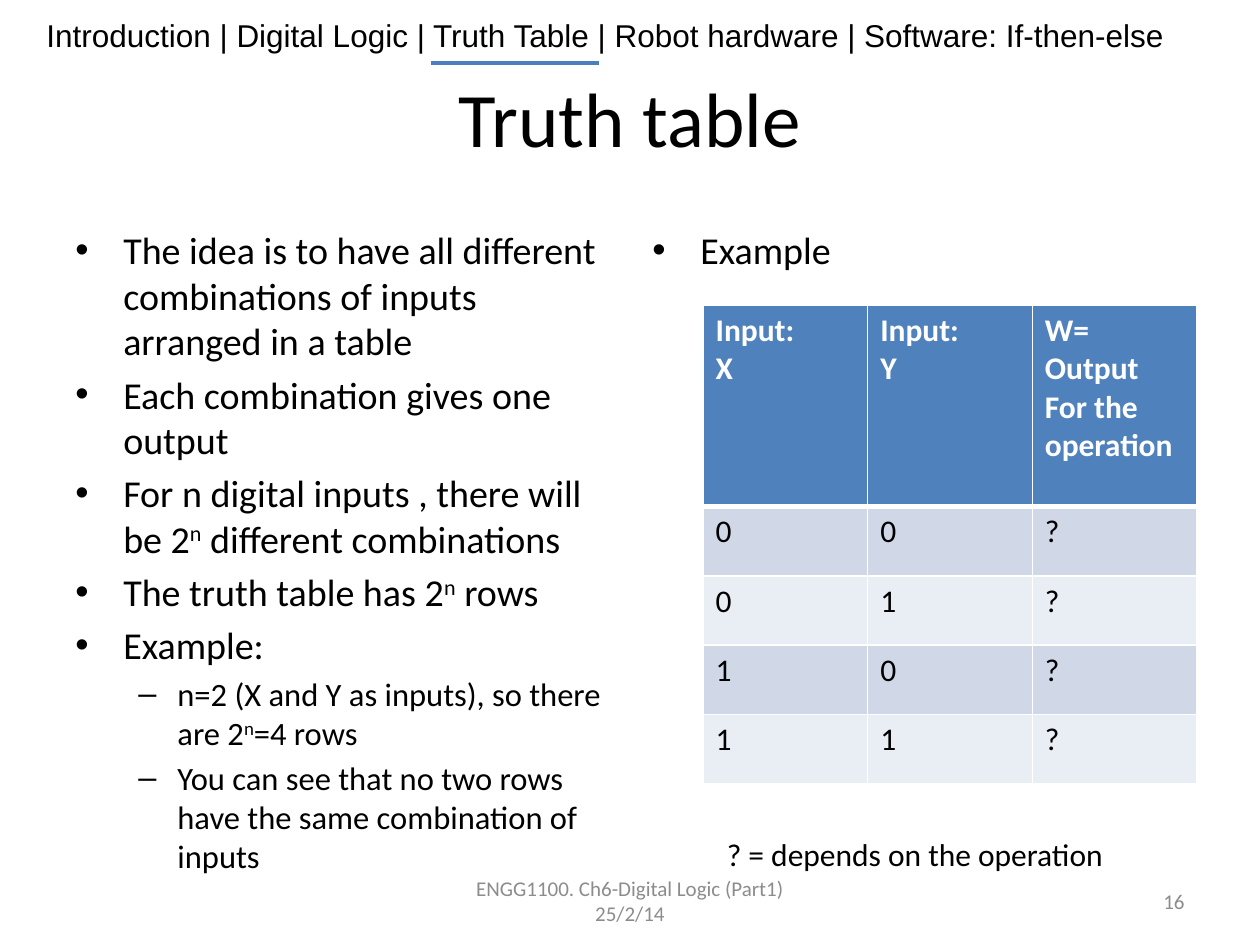
from lxml.etree import SubElement
from pptx import Presentation
from pptx.dml.color import RGBColor
from pptx.enum.shapes import MSO_CONNECTOR
from pptx.enum.text import MSO_ANCHOR as ANCHOR, PP_ALIGN as ALIGN
from pptx.oxml.ns import qn
from pptx.util import Inches, Pt

COLORS = {"text": "000000", "muted": "8C8C8C", "white": "FFFFFF", "header": "4F81BD",
          "band_dark": "D0D8E8", "band_light": "E9EDF4", "underline": "4B7EBC"}

SECTIONS = ["Introduction", "Digital Logic", "Truth Table", "Robot hardware",
            "Software: If-then-else"]
TITLE = "Truth table"
# (level, text); text between carets is superscript
IDEAS = [
    (0, "The idea is to have all different combinations of inputs arranged in a table"),
    (0, "Each combination gives one output"),
    (0, "For n digital inputs , there will be 2^n^ different combinations"),
    (0, "The truth table has 2^n^ rows"),
    (0, "Example:"),
    (1, "n=2 (X and Y as inputs), so there are 2^n^=4 rows"),
    (1, "You can see that no two rows have the same combination of inputs"),
]
EXAMPLE = [(0, "Example")]
TABLE = [["Input:\nX", "Input:\nY", "W=\nOutput\nFor the operation"],
         ["0", "0", "?"],
         ["0", "1", "?"],
         ["1", "0", "?"],
         ["1", "1", "?"]]
TABLE_NOTE = "? = depends on the operation"
FOOTER = "ENGG1100. Ch6-Digital Logic (Part1) 25/2/14"
PAGE_NUMBER = "16"

WIDTH, HEIGHT, MARGIN = 10, 7.5, 0.5
CONTENT_WIDTH = WIDTH - 2 * MARGIN
COLUMN_GAP = 0.16
COLUMN_WIDTH = (CONTENT_WIDTH - COLUMN_GAP) / 2
BODY_TOP, BODY_HEIGHT = 1.75, 4.95
FOOTER_TOP, FOOTER_HEIGHT = 6.95, 0.4
TABLE_WIDTH, TABLE_TOP = 3.92, 2.42
HEADER_HEIGHT, ROW_HEIGHT = 1.6, 0.55
# level: (text size, bullet, left indent, hanging indent)
LEVELS = {0: (21.7, "•", 0.38, 0.38), 1: (18.6, "–", 0.81, 0.31)}


def color(name):
    return RGBColor.from_string(COLORS[name])


def style(paragraph, size, color_name="text", font="Calibri", bold=False):
    paragraph.font.size = Pt(size)
    paragraph.font.name = font
    paragraph.font.bold = bold
    paragraph.font.color.rgb = color(color_name)


def add_text_frame(slide, left, top, width, height, wrap=True, anchor=ANCHOR.TOP):
    box = slide.shapes.add_textbox(*map(Inches, (left, top, width, height)))
    frame = box.text_frame
    frame.word_wrap = wrap
    frame.vertical_anchor = anchor
    return frame


def add_label(slide, text, place, size, color_name="text", font="Calibri",
              align=ALIGN.LEFT, **frame_options):
    paragraph = add_text_frame(slide, *place, **frame_options).paragraphs[0]
    paragraph.text = text
    paragraph.alignment = align
    style(paragraph, size, color_name, font)


def add_bullets(slide, items, column):
    left = MARGIN + column * (COLUMN_WIDTH + COLUMN_GAP)
    frame = add_text_frame(slide, left, BODY_TOP, COLUMN_WIDTH, BODY_HEIGHT)
    for index, (level, text) in enumerate(items):
        paragraph = frame.add_paragraph() if index else frame.paragraphs[0]
        size, bullet, indent, hanging = LEVELS[level]
        paragraph.level = level
        paragraph.space_before = Pt(round(size * 0.2, 1))
        style(paragraph, size)
        properties = paragraph._p.get_or_add_pPr()
        properties.set("marL", str(Inches(indent)))
        properties.set("indent", str(-Inches(hanging)))
        bullet_font = properties.makeelement(qn("a:buFont"), {"typeface": "Arial"})
        bullet_char = properties.makeelement(qn("a:buChar"), {"char": bullet})
        defaults = properties.find(qn("a:defRPr"))
        defaults.addprevious(bullet_font)
        defaults.addprevious(bullet_char)
        for part, words in enumerate(text.split("^")):
            run = paragraph.add_run()
            run.text = words
            run.font.size = Pt(size)
            if part % 2:
                run._r.get_or_add_rPr().set("baseline", "30000")


def set_borders(cell, widths):
    properties = cell._tc.get_or_add_tcPr()
    for side, width in widths.items():
        line = SubElement(properties, qn(f"a:ln{side}"), w=str(Pt(width)))
        fill = SubElement(line, qn("a:solidFill"))
        SubElement(fill, qn("a:srgbClr"), val=COLORS["white"])


def add_truth_table(slide):
    row_count, column_count = len(TABLE), len(TABLE[0])
    heights = [HEADER_HEIGHT] + [ROW_HEIGHT] * (row_count - 1)
    left = WIDTH - MARGIN - TABLE_WIDTH
    table = slide.shapes.add_table(
        row_count, column_count,
        *map(Inches, (left, TABLE_TOP, TABLE_WIDTH, sum(heights)))).table
    for row, height in zip(table.rows, heights):
        row.height = Inches(height)
    for row, values in enumerate(TABLE):
        header = row == 0
        fill = "header" if header else ("band_light", "band_dark")[row % 2]
        for column, text in enumerate(values):
            cell = table.cell(row, column)
            cell.text = text
            set_borders(cell, {"L": 1, "R": 1, "T": 3 if row == 1 else 1,
                               "B": 3 if header else 1})
            cell.fill.solid()
            cell.fill.fore_color.rgb = color(fill)
            for paragraph in cell.text_frame.paragraphs:
                style(paragraph, 18, "white" if header else "text", bold=header)


def add_section_underline(slide):
    line = slide.shapes.add_connector(
        MSO_CONNECTOR.STRAIGHT, *map(Inches, (3.42, 0.5, 4.75, 0.5)))
    line.line.color.rgb = color("underline")
    line.line.width = Pt(2)
    SubElement(line._element.spPr, qn("a:effectLst"))


def main():
    presentation = Presentation()
    presentation.slide_width, presentation.slide_height = Inches(WIDTH), Inches(HEIGHT)
    slide = presentation.slides.add_slide(presentation.slide_layouts[5])

    title = slide.shapes.title
    title.left, title.top = Inches(MARGIN), Inches(0.3)
    title.width, title.height = Inches(CONTENT_WIDTH), Inches(1.25)
    title.text_frame.text = TITLE
    title.text_frame.vertical_anchor = ANCHOR.MIDDLE
    title.text_frame.paragraphs[0].alignment = ALIGN.CENTER
    style(title.text_frame.paragraphs[0], 44)

    add_label(slide, " | ".join(SECTIONS), (0.27, 0.08, 9.5, 0.4), 18, font="Arial")
    add_section_underline(slide)
    add_bullets(slide, IDEAS, 0)
    add_bullets(slide, EXAMPLE, 1)
    add_truth_table(slide)
    add_label(slide, TABLE_NOTE, (5.67, 6.58, 3.23, 0.4), 18, wrap=False)

    footer_width, number_width = 3.17, 2.33
    add_label(slide, FOOTER,
              ((WIDTH - footer_width) / 2, FOOTER_TOP, footer_width, FOOTER_HEIGHT),
              12, "muted", align=ALIGN.CENTER, anchor=ANCHOR.MIDDLE)
    add_label(slide, PAGE_NUMBER,
              (WIDTH - MARGIN - number_width, FOOTER_TOP, number_width, FOOTER_HEIGHT),
              12, "muted", align=ALIGN.RIGHT, anchor=ANCHOR.MIDDLE)
    presentation.save("out.pptx")


if __name__ == "__main__":
    main()
